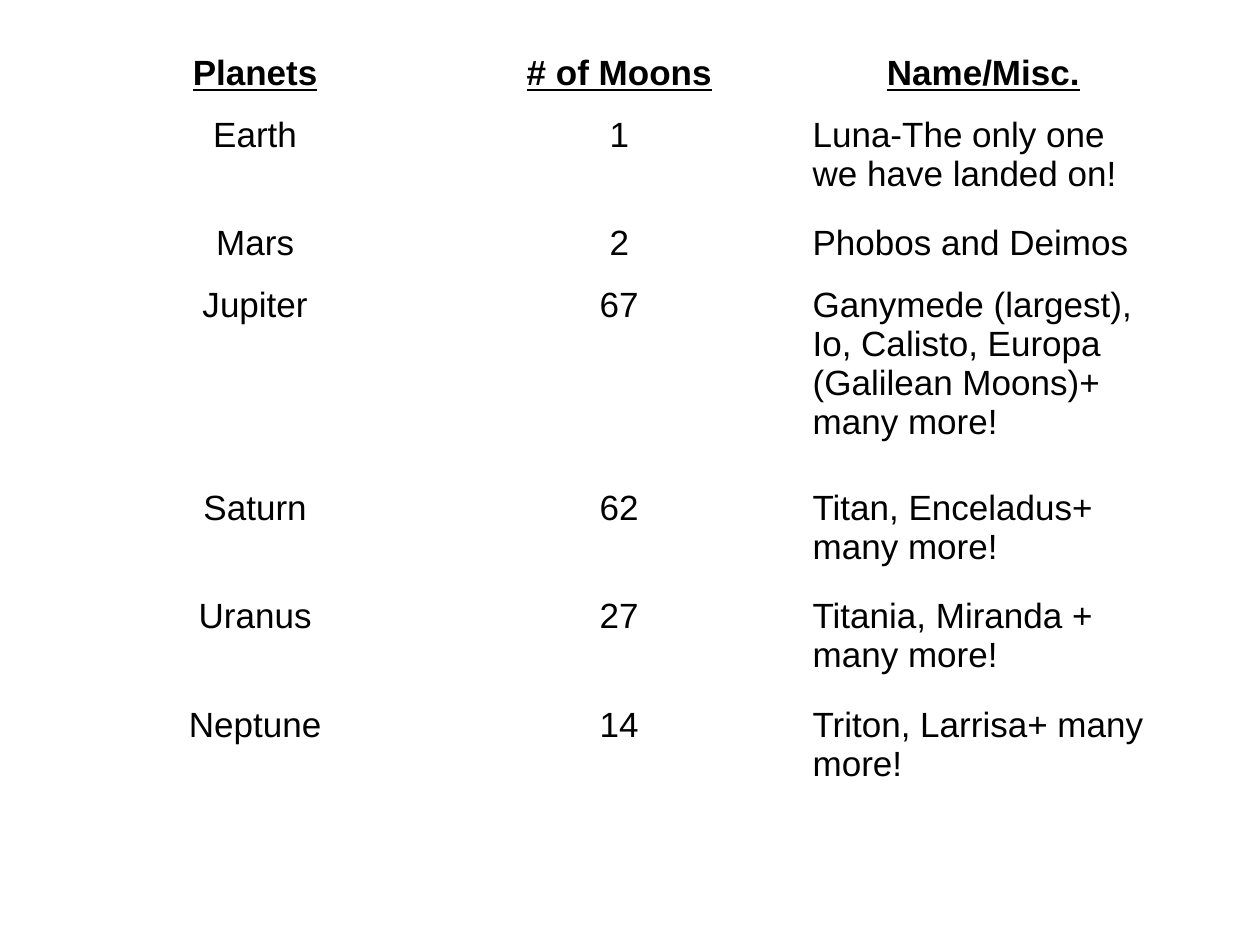
from dataclasses import dataclass

from pptx import Presentation
from pptx.dml.color import RGBColor
from pptx.enum.text import PP_ALIGN
from pptx.util import Inches, Pt

WIDE, HIGH = 10, 7.5
LEFT, TOP, COL = 0.58, 0.38, 2.89
LOW, MID, TALL = 0.49, 0.86, 1.61
INK = "000000"


@dataclass
class Row:
    planet: str
    moons: str
    names: str
    height: float = MID
    head: bool = False


ROWS = [
    Row("Planets", "# of Moons", "Name/Misc.", LOW, head=True),
    Row("Earth", "1", "Luna-The only one we have landed on!"),
    Row("Mars", "2", "Phobos and Deimos", LOW),
    Row("Jupiter", "67",
        "Ganymede (largest), Io, Calisto, Europa (Galilean Moons)+ many more!",
        TALL),
    Row("Saturn", "62", "Titan, Enceladus+ many more!"),
    Row("Uranus", "27", "Titania, Miranda + many more!"),
    Row("Neptune", "14", "Triton, Larrisa+ many more!"),
]


def color(code: str) -> RGBColor:
    return RGBColor.from_string(code)


def write(cell, text: str, *, size: float = 20, face: str = "Arial",
          ink: str = INK, head: bool = False, center: bool = True) -> None:
    cell.fill.background()
    cell.margin_left = cell.margin_right = Inches(0.09)
    cell.margin_top = cell.margin_bottom = Inches(0.05)
    para = cell.text_frame.paragraphs[0]
    para.alignment = PP_ALIGN.CENTER if center else PP_ALIGN.LEFT
    run = para.add_run()
    run.text = text
    font = run.font
    font.size, font.name = Pt(size), face
    font.bold = font.underline = head
    font.color.rgb = color(ink)


def draw(slide, rows: list[Row]) -> None:
    total = sum(row.height for row in rows)
    table = slide.shapes.add_table(
        len(rows), 3, Inches(LEFT), Inches(TOP),
        Inches(3 * COL), Inches(total)).table
    table.first_row = table.horz_banding = False
    for column in table.columns:
        column.width = Inches(COL)
    for line, row in enumerate(rows):
        table.rows[line].height = Inches(row.height)
        for col, text in enumerate((row.planet, row.moons, row.names)):
            write(table.cell(line, col), text, head=row.head,
                  center=row.head or col < 2)


def main() -> None:
    deck = Presentation()
    deck.slide_width, deck.slide_height = Inches(WIDE), Inches(HIGH)
    slide = deck.slides.add_slide(deck.slide_layouts[6])
    draw(slide, ROWS)
    deck.save("out.pptx")


if __name__ == "__main__":
    main()
